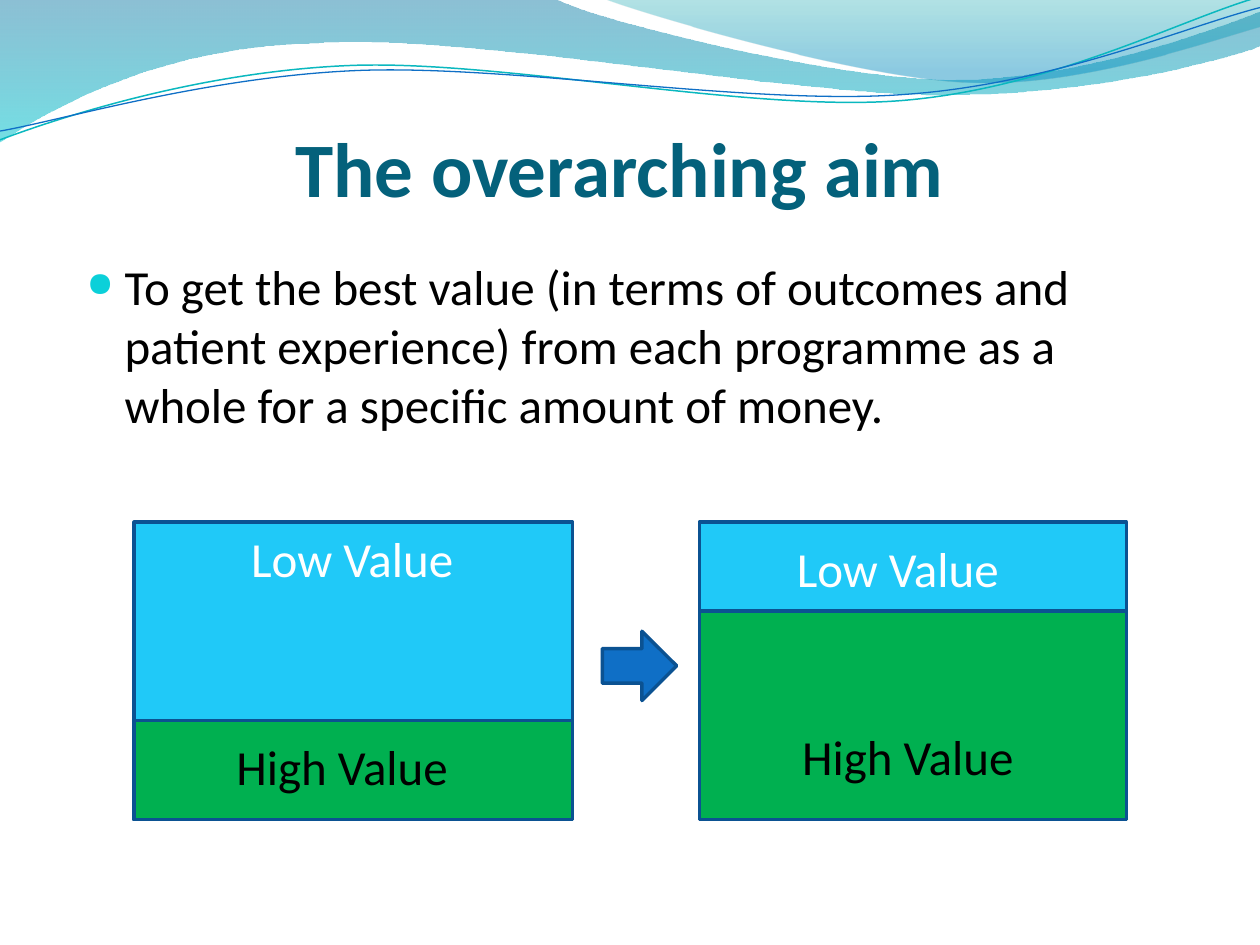
import math
from dataclasses import dataclass
from typing import Any

from lxml import etree
from pptx import Presentation
from pptx import util as u
from pptx.dml.color import RGBColor
from pptx.enum import shapes, text
from pptx.oxml.ns import qn

WIDTH, HEIGHT = u.Inches(10), u.Inches(7.5)
COL, ROW = WIDTH / 100, HEIGHT / 75  # the grid has 100 columns and 75 rows

BLACK = RGBColor(0x00, 0x00, 0x00)
WHITE = RGBColor(0xFF, 0xFF, 0xFF)
TITLE_TEAL = RGBColor(0x04, 0x61, 0x7B)
BULLET_CYAN = RGBColor(0x0B, 0xD0, 0xD9)
LOW_BLUE = RGBColor(0x20, 0xC9, 0xF8)
HIGH_GREEN = RGBColor(0x00, 0xB0, 0x50)
OUTLINE_BLUE = RGBColor(0x0B, 0x52, 0x92)
ARROW_BLUE = RGBColor(0x0F, 0x6F, 0xC6)
LINE_TEAL = RGBColor(0x0A, 0xB8, 0xBF)

Point = tuple[float, float]


@dataclass
class Stop:
    position: float
    color: RGBColor
    opacity: int  # percent


@dataclass
class Wave:
    """Points in grid units; a segment holds 1 point (line) or 3 (cubic curve)."""
    start: Point
    segments: list[list[Point]]
    stops: tuple[Stop, ...] = ()
    line: RGBColor | None = None
    weight: float = 0
    tilt: float = 0  # degrees, clockwise about the pivot
    pivot: Point = (0, 0)


@dataclass
class Panel:
    left: float
    width: float
    split: float  # row where the high-value part begins
    low_label: Point
    high_label: Point


WAVES = [
    Wave((0, 0), [
        [(44, -0.1)],
        [(47.6, 1.7), (66.4, 6.3), (75.8, 6.3)],
        [(85.3, 6.3), (95.8, 2.6), (100, 0.9)],
        [(100.1, 3.6)],
        [(98.3, 4.4), (87, 7.6), (74.6, 7.5)],
        [(62.2, 7.5), (38.2, 2.8), (25.7, 3.4)],
        [(12.9, 3.6), (4.6, 8.3), (-0.1, 11.3)],
        [(0, 0)],
    ], (Stop(0, RGBColor(0x00, 0x74, 0xA1), 45),
        Stop(1, RGBColor(0x00, 0xC6, 0xCF), 55))),
    Wave((47.9, -0.1), [
        [(50.9, 1.1), (68.2, 6.2), (76.9, 6.5)],
        [(85.6, 6.9), (96.1, 3.2), (100, 2.1)],
        [(100, 0)],
        [(47.9, -0.1)],
    ], (Stop(0, RGBColor(0x00, 0xA1, 0xA9), 30),
        Stop(0.8, RGBColor(0x00, 0x8B, 0xBF), 45))),
    Wave((0, 11.1), [
        [(4.8, 9.3), (15.8, 5.7), (27.7, 5.2)],
        [(39.5, 4.7), (59.3, 8.9), (71.3, 8)],
        [(83.3, 7.1), (93.8, 1.5), (99.8, -0.2)],
    ], line=LINE_TEAL, weight=0.85, tilt=-2.7, pivot=(49.9, 5.75)),
    Wave((0, 10.4), [
        [(4.7, 9.6), (16.4, 6.1), (28.3, 5.6)],
        [(40.3, 5.1), (59.7, 8.4), (71.7, 7.5)],
        [(83.6, 6.7), (94.1, 2.1), (100, 0.6)],
    ], line=ARROW_BLUE, weight=0.75, tilt=-2.7, pivot=(49.95, 5.9)),
]

PANEL_TOP, PANEL_BOTTOM = 41.45, 65.05
PANELS = [
    Panel(10.65, 34.8, 57.2, (18.5, 41.45), (17.7, 58)),
    Panel(55.5, 33.9, 48.5, (61.8, 42.25), (62.6, 57.2)),
]


def cells(left: float, top: float, width: float, height: float) -> list[int]:
    return [round(left * COL), round(top * ROW),
            round(width * COL), round(height * ROW)]


def apply(target: Any, values: dict[str, Any]) -> None:
    for name, value in values.items():
        setattr(target, name, value)


def level(wave: Wave, point: Point) -> Point:
    """Give a point's place in EMU before the wave is tilted."""
    angle = math.radians(-wave.tilt)
    across, down = point[0] - wave.pivot[0], point[1] - wave.pivot[1]
    return ((wave.pivot[0] + across * math.cos(angle) - down * math.sin(angle)) * COL,
            (wave.pivot[1] + across * math.sin(angle) + down * math.cos(angle)) * ROW)


def bend(shape: Any, segments: list[list[Point]]) -> None:
    """Join each run of three straight steps into one cubic curve."""
    steps = iter(list(shape.element.spPr.iter(qn("a:lnTo"))))
    for segment in segments:
        first, *others = [next(steps) for _ in segment]
        if others:
            first.tag = qn("a:cubicBezTo")
            for step in others:
                first.append(step[0])
                step.getparent().remove(step)


def draw_wave(page: Any, wave: Wave) -> None:
    builder = page.shapes.build_freeform(*level(wave, wave.start))
    builder.add_line_segments([level(wave, point) for segment in wave.segments
                               for point in segment], close=bool(wave.stops))
    shape = builder.convert_to_shape()
    bend(shape, wave.segments)
    shape.rotation = wave.tilt
    shape.shadow.inherit = False
    if not wave.stops:
        shape.fill.background()
        shape.line.color.rgb = wave.line
        shape.line.width = u.Pt(wave.weight)
        return
    shape.line.fill.background()
    shape.fill.gradient()
    shape.fill.gradient_angle = 270
    for target, stop in zip(shape.fill.gradient_stops, wave.stops):
        target.position = stop.position
        target.color.rgb = stop.color
    for color, stop in zip(shape.element.spPr.iter(qn("a:srgbClr")), wave.stops):
        etree.SubElement(color, qn("a:alpha"), val=str(stop.opacity * 1000))


def write(box: Any, words: str, size: float, color: RGBColor,
          align: Any = text.PP_ALIGN.CENTER, bold: bool = False) -> Any:
    box.text_frame.word_wrap = True
    para = box.text_frame.paragraphs[0]
    para.alignment = align
    span = para.add_run()
    span.text = words
    apply(span.font, {"name": "Calibri", "size": u.Pt(size), "bold": bold})
    span.font.color.rgb = color
    return para


def draw_block(page: Any, kind: Any, area: list[int], fill: RGBColor) -> None:
    block = page.shapes.add_shape(kind, *area)
    block.shadow.inherit = False
    block.fill.solid()
    block.fill.fore_color.rgb = fill
    block.line.color.rgb = OUTLINE_BLUE
    block.line.width = u.Pt(2)


def draw_panel(page: Any, panel: Panel) -> None:
    for top, fill in ((PANEL_TOP, LOW_BLUE), (panel.split, HIGH_GREEN)):
        draw_block(page, shapes.MSO_SHAPE.RECTANGLE,
                   cells(panel.left, top, panel.width, PANEL_BOTTOM - top), fill)
    for corner, words, color in ((panel.high_label, "High Value", BLACK),
                                 (panel.low_label, "Low Value", WHITE)):
        write(page.shapes.add_textbox(*cells(*corner, 18.9, 5.7)), words, 28, color)


def add_title(page: Any) -> None:
    title = page.shapes.title
    apply(title, dict(zip(("left", "top", "width", "height"), cells(4.9, 4.4, 90, 12.5))))
    apply(title.text_frame, {
        "vertical_anchor": text.MSO_ANCHOR.BOTTOM, "margin_left": 0, "margin_right": 0,
        "margin_top": u.Inches(0.05), "margin_bottom": 0})
    write(title, "The overarching aim ", 44, TITLE_TEAL, bold=True)


def add_aim(page: Any) -> None:
    box = page.shapes.add_textbox(*cells(5.9, 19.9, 87.4, 25.6))
    para = write(box, "To get the best value (in terms of outcomes and patient experience) "
                 "from each programme as a whole for a specific amount of money.",
                 28, BLACK, text.PP_ALIGN.LEFT)
    para.space_before = u.Pt(5.6)
    props = para._p.get_or_add_pPr()
    indent = u.Inches(0.3)
    props.set("marL", str(indent))
    props.set("indent", str(-indent))
    color = etree.SubElement(props, qn("a:buClr"))
    etree.SubElement(color, qn("a:srgbClr"), val=str(BULLET_CYAN))
    etree.SubElement(props, qn("a:buSzPct"), val="70000")
    etree.SubElement(props, qn("a:buChar"), char="●")


def main() -> None:
    deck = Presentation()
    apply(deck, {"slide_width": WIDTH, "slide_height": HEIGHT})
    page = deck.slides.add_slide(deck.slide_layouts.get_by_name("Title Only"))
    for wave in WAVES:
        draw_wave(page, wave)
    add_title(page)
    add_aim(page)
    for panel in PANELS:
        draw_panel(page, panel)
    draw_block(page, shapes.MSO_SHAPE.RIGHT_ARROW, cells(47.8, 50.1, 5.9, 5.5), ARROW_BLUE)
    deck.save("out.pptx")


if __name__ == "__main__":
    main()
